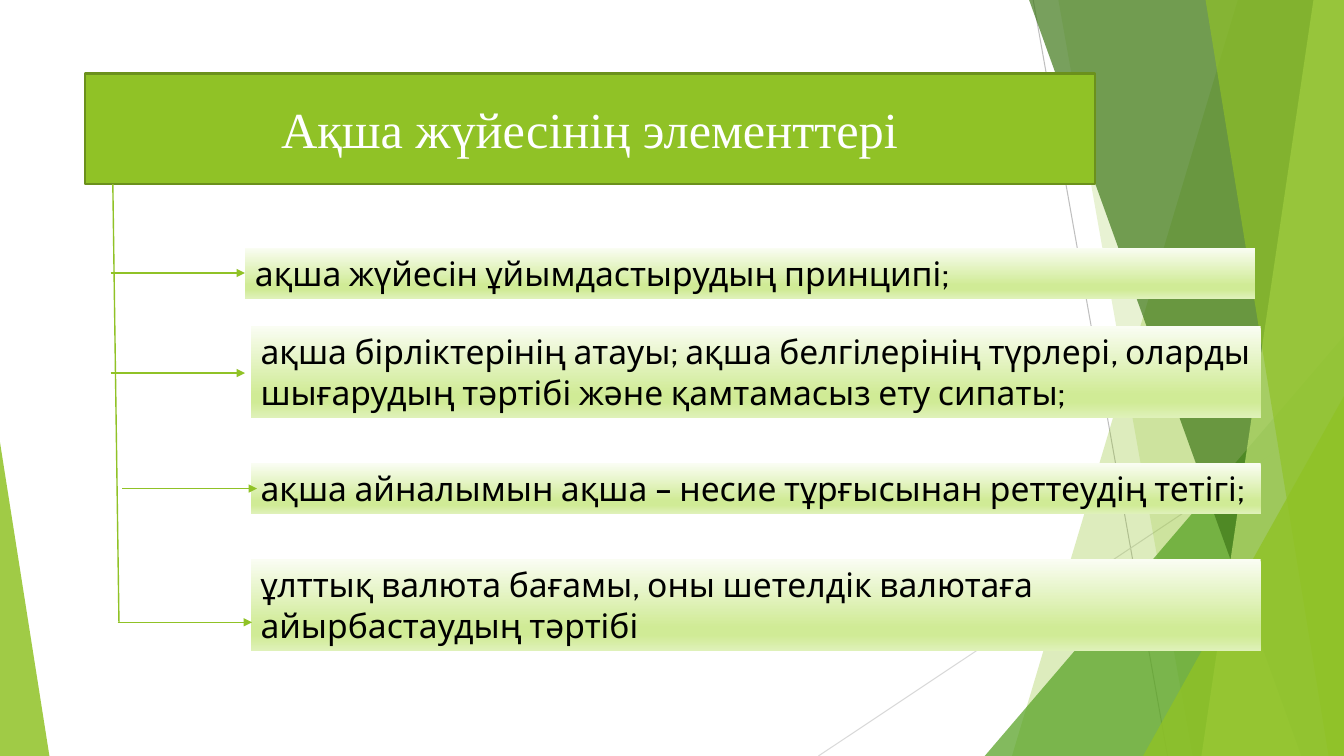
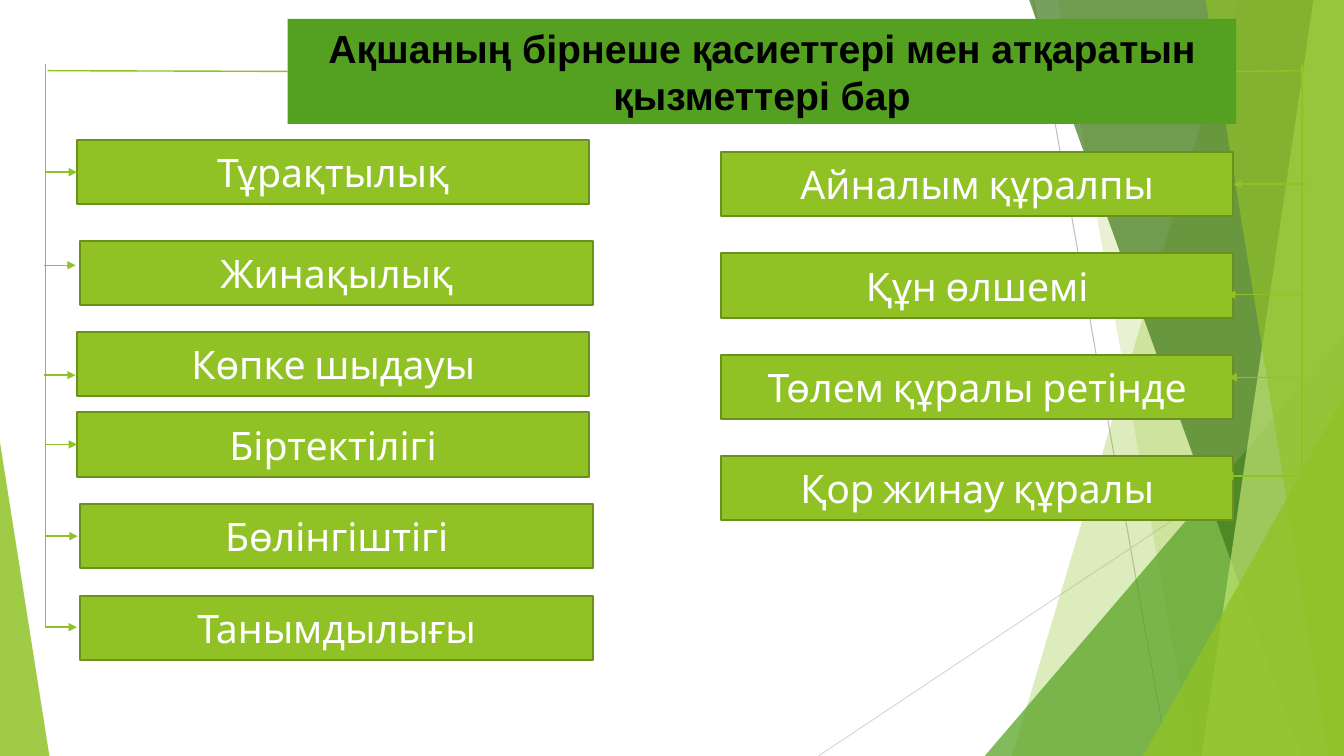
from copy import deepcopy

from pptx import Presentation
from pptx.dml.color import RGBColor
from pptx.enum import shapes, text
from pptx.oxml import ns
from pptx.oxml.xmlchemy import OxmlElement
from pptx.util import Pt

LIME = RGBColor(0x90, 0xC2, 0x26)
GREEN = RGBColor(0x54, 0xA0, 0x21)
DARK = RGBColor(0x3F, 0x78, 0x19)
PALE = RGBColor(0xC0, 0xE4, 0x74)
OLIVE = RGBColor(0x6B, 0x90, 0x1C)
GRAY = RGBColor(0xBF, 0xBF, 0xBF)
SILVER = RGBColor(0xD9, 0xD9, 0xD9)
WHITE = RGBColor(0xFF, 0xFF, 0xFF)
BLACK = RGBColor(0, 0, 0)
FADE = [
    (0, RGBColor(0xFA, 0xFD, 0xF3)),
    (0.74, RGBColor(0xD0, 0xEB, 0x96)),
    (0.83, RGBColor(0xD0, 0xEB, 0x96)),
    (1, RGBColor(0xDF, 0xF1, 0xB9)),
]

CENTER, LEFT = text.PP_ALIGN.CENTER, text.PP_ALIGN.LEFT
MIDDLE, TOP = text.MSO_ANCHOR.MIDDLE, text.MSO_ANCHOR.TOP
GROW = text.MSO_AUTO_SIZE.SHAPE_TO_FIT_TEXT
FIXED = text.MSO_AUTO_SIZE.NONE
SIZE = (960, 540)

HEAD = dict(font=dict(name="Times New Roman", size=Pt(36)), ink=WHITE, fill=LIME,
            edge=OLIVE, align=CENTER, frame=dict(vertical_anchor=MIDDLE, auto_size=FIXED))
BAND = dict(font=dict(name="Arial", size=Pt(28), bold=True), ink=BLACK, fill=GREEN,
            edge=None, align=CENTER, frame=dict(vertical_anchor=TOP, auto_size=GROW))
ITEM = dict(font=dict(name="Cabin", size=Pt(24)), ink=BLACK, fill=FADE,
            edge=None, align=LEFT, frame=dict(vertical_anchor=TOP, auto_size=GROW))
CARD = {**HEAD, "font": dict(name="Cabin", size=Pt(28))}


def put(slide, words, area, look):
    """Add a rectangle with text in the given look."""
    box = slide.shapes.add_shape(shapes.MSO_SHAPE.RECTANGLE, *map(Pt, area))
    box.shadow.inherit = False
    if look["fill"] is FADE:
        box.fill.gradient()
        box.fill.gradient_angle = 270
        stops = box.element.spPr.find(".//" + ns.qn("a:gsLst"))
        stops.extend([deepcopy(stops[0]), deepcopy(stops[0])])
        for stop, (place, color) in zip(box.fill.gradient_stops, FADE):
            stop.position = place
            stop.color.rgb = color
    else:
        box.fill.solid()
        box.fill.fore_color.rgb = look["fill"]
    if look["edge"]:
        box.line.color.rgb = look["edge"]
        box.line.width = Pt(1.5)
    else:
        box.line.fill.background()
    frame = box.text_frame
    frame.word_wrap = True
    for key, value in look["frame"].items():
        setattr(frame, key, value)
    para = frame.paragraphs[0]
    para.alignment = look["align"]
    run = para.add_run()
    run.text = words
    run.font.color.rgb = look["ink"]
    for key, value in look["font"].items():
        setattr(run.font, key, value)
    return box


def link(slide, start, end, arrow=False, color=LIME, width=1):
    """Add a straight line, with an arrowhead at its end if asked."""
    line = slide.shapes.add_connector(
        shapes.MSO_CONNECTOR.STRAIGHT, *map(Pt, (*start, *end)))
    line.line.color.rgb = color
    line.line.width = Pt(width)
    if arrow:
        tip = OxmlElement("a:tailEnd")
        tip.set("type", "triangle")
        line.line._get_or_add_ln().append(tip)
    line._element.spPr.append(OxmlElement("a:effectLst"))
    return line


deck = Presentation()
deck.slide_width, deck.slide_height = map(Pt, SIZE)
blank = deck.slide_layouts[6]
first = deck.slides.add_slide(blank)

# Backdrop: built once, then moved to the layout
link(first, (738, 0), (834, 540), color=GRAY, width=0.75)
link(first, (960, 290), (584.6, 540), color=SILVER, width=0.75)

# Bands: top left x, bottom left x; wedges: left, top, width, height, apex
facets = [
    ((884.2, 722.9), LIME, 30),
    ((756, 851.8), LIME, 20),
    ((703.4, 240, 256.6, 300, 1), GREEN, 72),
    ((735.1, 929.5), DARK, 70),
    ((938.2, 858.2), PALE, 70),
    ((861.1, 949), LIME, 65),
    ((816.5, 283, 143.5, 257, 1), LIME, 80),
    ((0, 316, 35.3, 224, 0), LIME, 85),
]
for form, color, alpha in facets:
    if len(form) == 2:
        top, base = form
        pen = first.shapes.build_freeform(Pt(top), 0, scale=1.0)
        pen.add_line_segments(
            [(Pt(x), Pt(y)) for x, y in ((960, 0), SIZE, (base, 540))], close=True)
        facet = pen.convert_to_shape()
    else:
        *area, apex = form
        facet = first.shapes.add_shape(
            shapes.MSO_SHAPE.ISOSCELES_TRIANGLE, *map(Pt, area))
        facet.adjustments[0] = apex
    facet.shadow.inherit = False
    facet.line.fill.background()
    facet.fill.solid()
    facet.fill.fore_color.rgb = color
    clear = OxmlElement("a:alpha")
    clear.set("val", str(alpha * 1000))
    facet.element.spPr.find(".//" + ns.qn("a:srgbClr")).append(clear)

for holder in list(blank.placeholders):
    holder.element.getparent().remove(holder.element)
for part in list(first.shapes):
    blank.shapes._spTree.append(part._element)

# Slide 1: elements of the money system
put(first, "Ақша жүйесінің элементтері", (60.5, 52.5, 721.5, 79), HEAD)
link(first, (80.6, 131.5), (85, 445))
items = [
    ("ақша жүйесін ұйымдастырудың принципі;", 175, 177, 36, (175, 195)),
    ("ақша бірліктерінің атауы; ақша белгілерінің түрлері, оларды шығарудың "
     "тәртібі және қамтамасыз ету сипаты;", 179, 233, 65.5, (175, 266.5)),
    ("ақша айналымын ақша – несие тұрғысынан реттеудің тетігі;",
     179, 331, 36, (183.5, 349)),
    ("ұлттық валюта бағамы, оны шетелдік валютаға айырбастаудың тәртібі",
     179, 399.5, 65.5, (180, 444.5)),
]
for words, x, y, high, tip in items:
    box = put(first, words, (x, y, 721.5, high), ITEM)
    line = link(first, (tip[0] - 96, tip[1]), tip, arrow=True)
    if tip == (x, y + high / 2):
        line.end_connect(box, 1)

# Slide 2: properties on the left, functions on the right
second = deck.slides.add_slide(blank)
band = put(second, "Ақшаның бірнеше қасиеттері мен атқаратын қызметтері бар",
           (205.5, 13.5, 677.5, 75), BAND)
link(second, (34, 50.5), (205.5, 51)).end_connect(band, 1)
link(second, (933, 50.5), (883, 51)).end_connect(band, 3)
link(second, (32.5, 46), (32.5, 448.5))
link(second, (930, 46), (930, 340))

WIDE, HIGH = 366, 46
traits = [
    ("Тұрақтылық", 55, 100, (55, 123)),
    ("Жинақылық", 57.5, 172, (54, 189.5)),
    ("Көпке шыдауы", 55, 237, (54, 268)),
    ("Біртектілігі", 55, 294.5, (55, 317.5)),
    ("Бөлінгіштігі", 57.5, 360, (55.5, 383)),
    ("Танымдылығы", 57.5, 425.5, (55, 448)),
]
roles = [
    ("Айналым құралпы", 515, 108.5, (881, 131.5)),
    ("Құн өлшемі", 515, 181, (876.5, 210.5)),
    ("Төлем құралы ретінде", 515, 253.5, (877.5, 269.5)),
    ("Қор жинау құралы", 515, 325.5, (875, 340)),
]
for cards, shift, edge, site in ((traits, -22.5, 0, 1), (roles, 52.5, WIDE, 3)):
    for words, x, y, tip in cards:
        box = put(second, words, (x, y, WIDE, HIGH), CARD)
        line = link(second, (tip[0] + shift, tip[1]), tip, arrow=True)
        if tip == (x + edge, y + HIGH / 2):
            line.end_connect(box, site)

deck.save("out.pptx")
